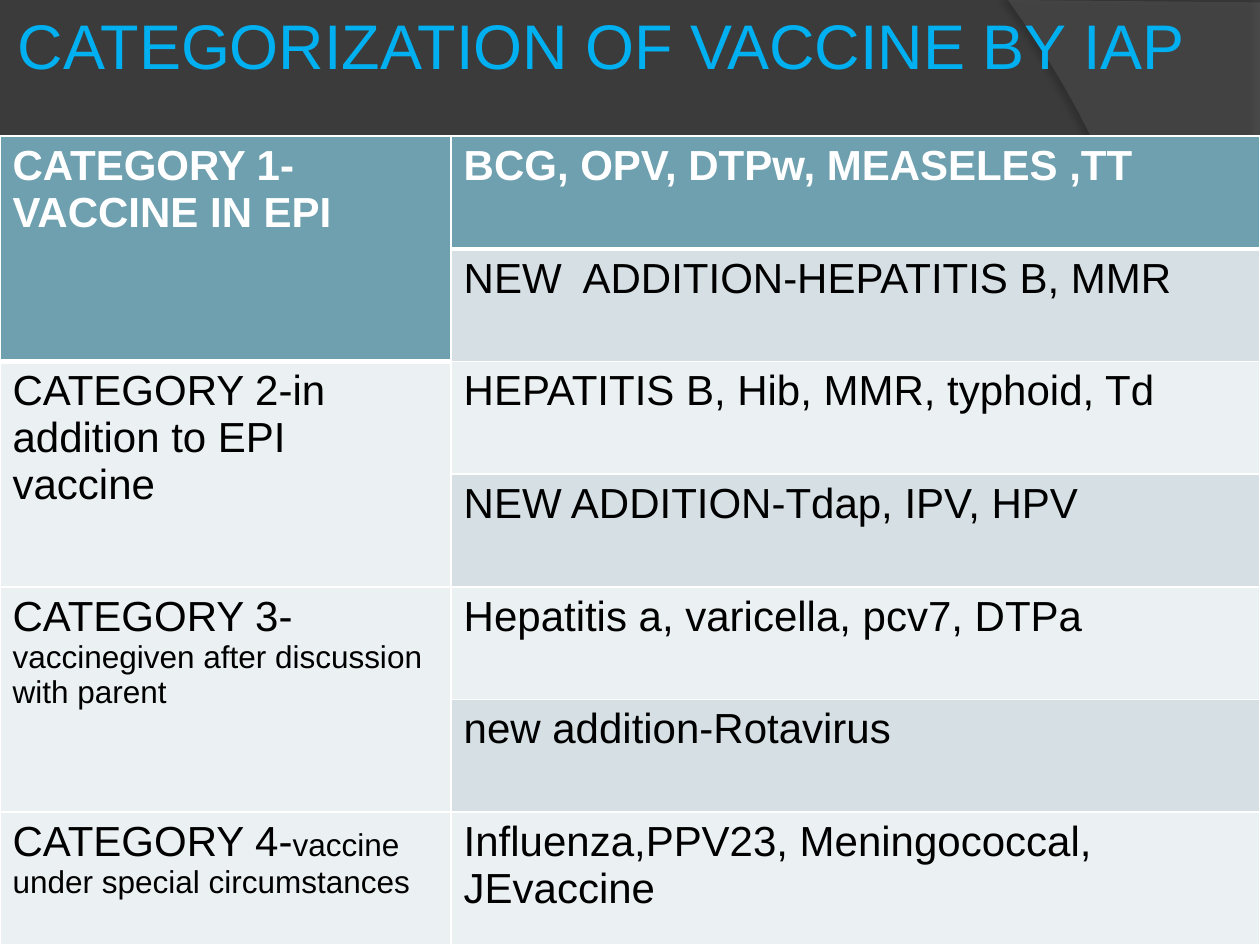
from lxml import etree
from pptx import Presentation
from pptx import util as u
from pptx.dml.color import RGBColor
from pptx.enum import text
from pptx.oxml import ns

COLORS = {
    "background": "3B3B3B", "wave": "7F7F7F", "side": "5E5E5E",
    "title": "00B0F0", "header": "6EA0B0", "dark band": "D5DFE4",
    "light band": "EBF0F2", "white": "FFFFFF", "black": "000000",
}
FONT = "Arial"
WIDTH, HEIGHT = 720, 540
TABLE_TOP, ROW_HEIGHT, LAST_ROW_HEIGHT = 77.8, 64.4, 75.8
COLUMN_WIDTHS = (257.8, 462.2)

# Each category: heading runs as (text, size), then its vaccine rows
CATEGORIES = [
    ([("CATEGORY 1-VACCINE IN EPI", 24)],
     ["BCG, OPV, DTPw, MEASELES ,TT", "NEW  ADDITION-HEPATITIS B, MMR"]),
    ([("CATEGORY 2-in addition to EPI vaccine", 24)],
     ["HEPATITIS B, Hib, MMR, typhoid, Td", "NEW ADDITION-Tdap, IPV, HPV"]),
    ([("CATEGORY 3-", 24), ("vaccinegiven after discussion with parent", 18)],
     ["Hepatitis a, varicella, pcv7, DTPa", "new addition-Rotavirus"]),
    ([("CATEGORY 4-", 24), ("vaccine under special circumstances", 18)],
     ["Influenza,PPV23, Meningococcal, JEvaccine"]),
]


def color(name):
    return RGBColor.from_string(COLORS[name])


def add_xml(parent, tag, **attributes):
    return etree.SubElement(parent, ns.qn(tag), attributes)


def add_color(parent, name, alpha=100):
    element = add_xml(parent, "a:srgbClr", val=COLORS[name])
    add_xml(element, "a:alpha", val=str(alpha * 1000))


def curve(start, control1, control2, end, steps=40):
    """Points along a cubic curve, start included."""
    points = []
    for step in range(steps + 1):
        t = step / steps
        weights = ((1 - t) ** 3, 3 * t * (1 - t) ** 2, 3 * t * t * (1 - t), t ** 3)
        points.append(tuple(
            sum(weight * value for weight, value in zip(weights, values))
            for values in zip(start, control1, control2, end)))
    return points


def add_backdrop(slide, points, fill, alpha, shadow_alpha, shadow_blur, direction):
    points = [(u.Pt(x), u.Pt(y)) for x, y in points]
    builder = slide.shapes.build_freeform(*points[0])
    builder.add_line_segments(points[1:], close=True)
    shape = builder.convert_to_shape()
    shape.fill.solid()
    shape.fill.fore_color.rgb = color(fill)
    shape.line.fill.background()
    fill_color = shape.fill._xPr.find(".//" + ns.qn("a:srgbClr"))
    add_xml(fill_color, "a:alpha", val=str(alpha * 1000))
    effects = add_xml(shape._element.spPr, "a:effectLst")
    shadow = add_xml(effects, "a:outerShdw", blurRad=str(u.Pt(shadow_blur)),
                     dist=str(u.Pt(4)), dir=str(direction * 60000),
                     algn="ctr", rotWithShape="0")
    add_color(shadow, "black", shadow_alpha)
    return shape


def add_backdrops(slide):
    wave = [(0, HEIGHT), (WIDTH, HEIGHT)] + curve(
        (WIDTH, 374.4), (402.5, 524.9), (281.5, 517.7), (0, 507.6))
    side = [(WIDTH, 1.4), (WIDTH, HEIGHT)] + curve(
        (591.1, HEIGHT), (673.2, 445.7), (733, 216), (576, 0))
    backdrops = [add_backdrop(slide, wave, "wave", 45, 35, 3.5, 270),
                 add_backdrop(slide, side, "side", 40, 45, 4, 180)]
    # Send both behind the placeholder
    tree = slide.shapes._spTree
    for index, shape in enumerate(backdrops):
        tree.insert(2 + index, shape._element)


def add_heading(slide):
    title = slide.shapes.title
    title._element.getparent().remove(title._element)
    body = slide.placeholders[1]
    body.left, body.top = u.Pt(0), u.Pt(0)
    body.width, body.height = u.Pt(WIDTH), u.Pt(HEIGHT)
    body.text_frame.vertical_anchor = text.MSO_ANCHOR.TOP
    paragraph = body.text_frame.paragraphs[0]
    paragraph.text = "CATEGORIZATION OF VACCINE BY IAP"
    paragraph.font.size, paragraph.font.name = u.Pt(36), FONT
    paragraph.font.color.rgb = color("title")
    properties = paragraph._p.get_or_add_pPr()
    properties.set("marL", str(u.Pt(33)))
    properties.set("indent", str(u.Pt(-30)))
    properties.insert(0, etree.Element(ns.qn("a:buNone")))


def set_borders(cell, top, bottom):
    properties = cell._tc.get_or_add_tcPr()
    for side, width in (("L", 1), ("R", 1), ("T", top), ("B", bottom)):
        line = add_xml(properties, f"a:ln{side}", w=str(u.Pt(width)))
        add_color(add_xml(line, "a:solidFill"), "white")


def fill_cell(cell, fill, runs, header=False):
    cell.fill.solid()
    cell.fill.fore_color.rgb = color(fill)
    paragraph = cell.text_frame.paragraphs[0]
    paragraph.font.name, paragraph.font.bold = FONT, header
    paragraph.font.color.rgb = color("white" if header else "black")
    for words, size in runs:
        run = paragraph.add_run()
        run.text, run.font.size = words, u.Pt(size)


def add_vaccine_table(slide):
    row_count = sum(len(vaccines) for _, vaccines in CATEGORIES)
    table = slide.shapes.add_table(
        row_count, 2, u.Pt(0), u.Pt(TABLE_TOP),
        u.Pt(WIDTH), u.Pt(HEIGHT - TABLE_TOP)).table
    table.first_row = table.horz_banding = False
    for column, width in zip(table.columns, COLUMN_WIDTHS):
        column.width = u.Pt(width)
    for row in table.rows:
        row.height = u.Pt(ROW_HEIGHT)
    table.rows[row_count - 1].height = u.Pt(LAST_ROW_HEIGHT)

    # A thick rule closes the header cell of each column
    for column, header_end in enumerate((1, 0)):
        for row in range(row_count):
            set_borders(table.cell(row, column),
                        top=3 if row == header_end + 1 else 1,
                        bottom=3 if row == header_end else 1)

    row = 0
    for heading, vaccines in CATEGORIES:
        header = row == 0
        category = table.cell(row, 0)
        if len(vaccines) > 1:
            category.merge(table.cell(row + len(vaccines) - 1, 0))
        fill_cell(category, "header" if header else "light band", heading, header)
        for offset, vaccine in enumerate(vaccines):
            is_header = header and offset == 0
            band = "dark band" if offset else "light band"
            fill_cell(table.cell(row + offset, 1),
                      "header" if is_header else band, [(vaccine, 24)], is_header)
        row += len(vaccines)


def main():
    presentation = Presentation()
    presentation.slide_width, presentation.slide_height = u.Pt(WIDTH), u.Pt(HEIGHT)
    slide = presentation.slides.add_slide(presentation.slide_layouts[1])
    slide.background.fill.solid()
    slide.background.fill.fore_color.rgb = color("background")
    add_backdrops(slide)
    add_heading(slide)
    add_vaccine_table(slide)
    presentation.save("out.pptx")


if __name__ == "__main__":
    main()
